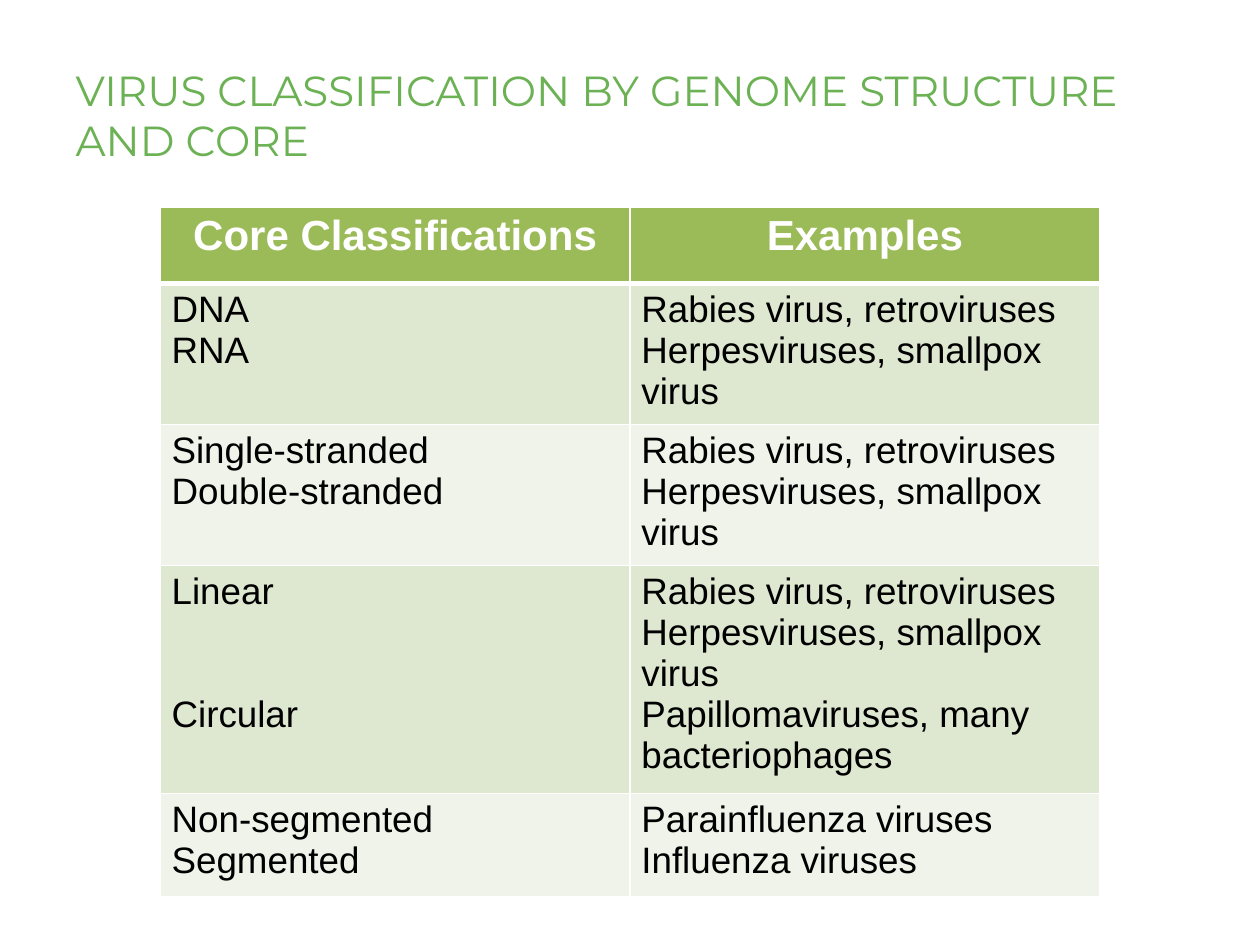
from dataclasses import dataclass

import pptx
import pptx.dml.color
import pptx.enum.text
import pptx.oxml
import pptx.oxml.ns
import pptx.util
from pptx.dml.color import RGBColor
from pptx.util import Cm, Pt

TITLE_GREEN = RGBColor(0x6C, 0xB2, 0x55)
HEADER_GREEN = RGBColor(0x9B, 0xBB, 0x59)
BAND_DARK = RGBColor(0xDE, 0xE7, 0xD0)
BAND_LIGHT = RGBColor(0xEF, 0xF3, 0xE9)
WHITE = RGBColor(0xFF, 0xFF, 0xFF)
BLACK = RGBColor(0, 0, 0)
ALIGN = pptx.enum.text.PP_ALIGN
ANCHOR = pptx.enum.text.MSO_ANCHOR


@dataclass
class Row:
    height: float  # cm
    classes: str
    examples: str
    gap: float = 0  # points between the classes


@dataclass
class Style:
    size: float
    color: RGBColor
    fill: RGBColor
    bold: bool
    align: int
    top: float = 1  # border widths in points
    bottom: float = 1


RABIES_HERPES = "Rabies virus, retroviruses\nHerpesviruses, smallpox virus"
ROWS = [
    Row(1.55, "Core Classifications", "Examples"),
    Row(2.84, "DNA\nRNA", RABIES_HERPES),
    Row(2.84, "Single-stranded\nDouble-stranded", RABIES_HERPES),
    Row(4.6, "Linear\nCircular",
        RABIES_HERPES + "\nPapillomaviruses, many bacteriophages", gap=47),
    Row(2.08, "Non-segmented\nSegmented",
        "Parainfluenza viruses\nInfluenza viruses"),
]


def row_style(i: int) -> Style:
    if i == 0:
        return Style(24, WHITE, HEADER_GREEN, True, ALIGN.CENTER, bottom=3)
    fill = BAND_DARK if i % 2 else BAND_LIGHT
    return Style(21, BLACK, fill, False, ALIGN.LEFT, top=3 if i == 1 else 1)


def set_borders(cell, style: Style) -> None:
    tc_pr = cell._tc.get_or_add_tcPr()
    widths = {"L": 1, "R": 1, "T": style.top, "B": style.bottom}
    for i, (side, width) in enumerate(widths.items()):
        tc_pr.insert(i, pptx.oxml.parse_xml(
            f'<a:ln{side} {pptx.oxml.ns.nsdecls("a")} w="{Pt(width)}">'
            f'<a:solidFill><a:srgbClr val="{WHITE}"/></a:solidFill></a:ln{side}>'))


def fill_cell(cell, text: str, style: Style, gap: float) -> None:
    cell.margin_left = cell.margin_right = Cm(0.23)
    cell.margin_top = cell.margin_bottom = Cm(0.11)
    cell.fill.solid()
    cell.fill.fore_color.rgb = style.fill
    set_borders(cell, style)
    tf = cell.text_frame
    tf.text = text
    for i, p in enumerate(tf.paragraphs):
        p.alignment = style.align
        if i and gap:
            p.space_before = Pt(gap)
        for r in p.runs:
            r.font.name = "Arial"
            r.font.size = Pt(style.size)
            r.font.bold = style.bold
            r.font.color.rgb = style.color


def add_title(s, text: str) -> None:
    sp = s.shapes.title
    sp.left, sp.top, sp.width, sp.height = Cm(1.27), Cm(0.66), Cm(22.4), Cm(2.8)
    tf = sp.text_frame
    tf.text = text
    tf.word_wrap = True
    tf.auto_size = pptx.enum.text.MSO_AUTO_SIZE.NONE
    tf.vertical_anchor = ANCHOR.BOTTOM
    p = tf.paragraphs[0]
    p.alignment = ALIGN.LEFT
    r = p.runs[0]
    r.font.name = "Montserrat"
    r.font.size = Pt(24)
    r.font.color.rgb = TITLE_GREEN


def add_class_table(s, rows: list[Row]) -> None:
    height = sum(row.height for row in rows)
    table = s.shapes.add_table(len(rows), 2, Cm(3.23), Cm(4.17),
                               Cm(18.94), Cm(height)).table
    for i, row in enumerate(rows):
        table.rows[i].height = Cm(row.height)
        style = row_style(i)
        fill_cell(table.cell(i, 0), row.classes, style, row.gap)
        fill_cell(table.cell(i, 1), row.examples, style, 0)


def main() -> None:
    prs = pptx.Presentation()
    prs.slide_width, prs.slide_height = Cm(25.4), Cm(19.05)
    s = prs.slides.add_slide(prs.slide_layouts[5])  # title only

    # Title
    add_title(s, "VIRUS CLASSIFICATION BY GENOME STRUCTURE AND CORE")

    # Classification table
    add_class_table(s, ROWS)

    prs.save("out.pptx")


if __name__ == "__main__":
    main()
